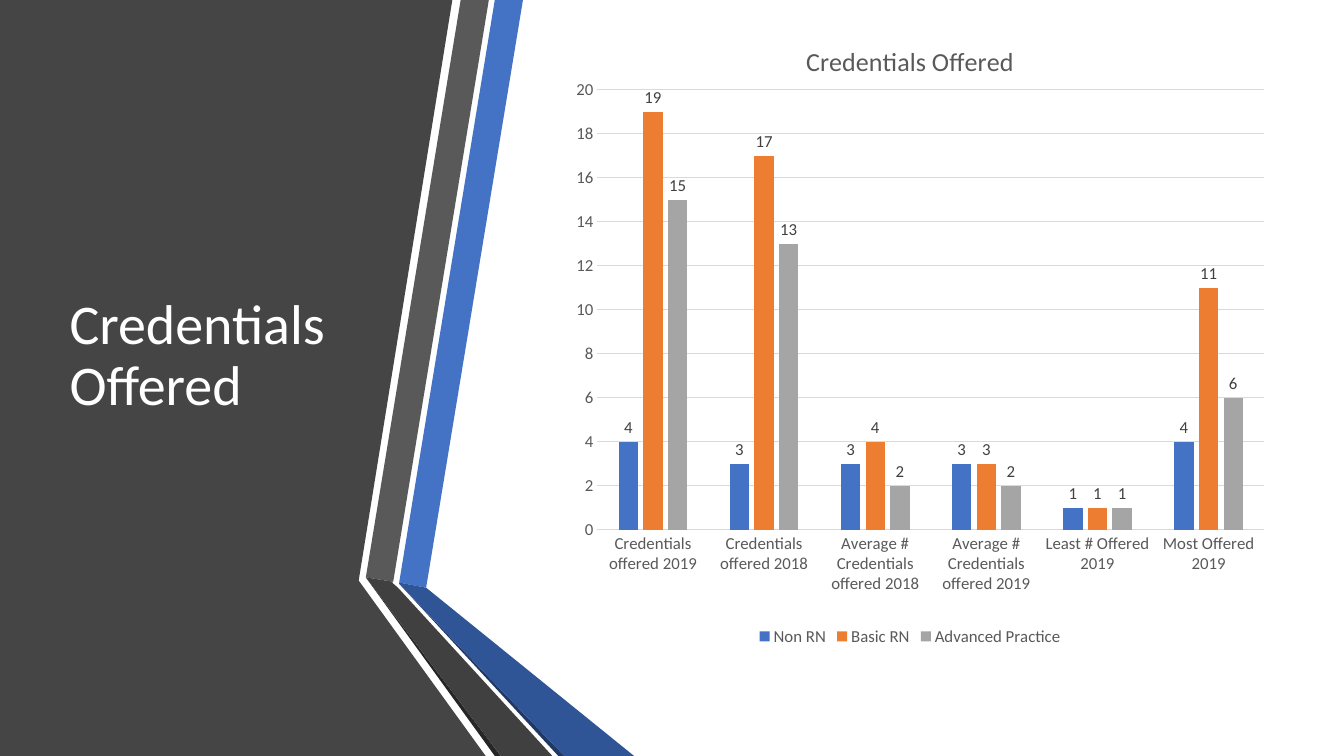
from typing import NamedTuple

from lxml import etree
from pptx import Presentation
from pptx.chart.chart import Chart
from pptx.chart.data import CategoryChartData
from pptx.dml.color import RGBColor
from pptx.enum.chart import XL_CHART_TYPE, XL_LABEL_POSITION, XL_LEGEND_POSITION, XL_TICK_MARK
from pptx.enum.text import MSO_ANCHOR, PP_ALIGN
from pptx.oxml.ns import qn
from pptx.slide import Slide
from pptx.text.text import Font
from pptx.util import Cm, Pt

CLUSTERED = XL_CHART_TYPE.COLUMN_CLUSTERED
OUTSIDE_END = XL_LABEL_POSITION.OUTSIDE_END
BOTTOM = XL_LEGEND_POSITION.BOTTOM
NO_TICK = XL_TICK_MARK.NONE
MIDDLE = MSO_ANCHOR.MIDDLE
LEFT = PP_ALIGN.LEFT

WHITE = RGBColor(0xFF, 0xFF, 0xFF)
PANEL_GRAY = RGBColor(0x45, 0x45, 0x45)
BLUE = RGBColor(0x44, 0x72, 0xC4)
ORANGE = RGBColor(0xED, 0x7D, 0x31)
SILVER = RGBColor(0xA5, 0xA5, 0xA5)
TEXT_GRAY = RGBColor(0x59, 0x59, 0x59)
BLACKISH = RGBColor(0x26, 0x26, 0x26)
NAVY = RGBColor(0x20, 0x38, 0x64)
DEEP_BLUE = RGBColor(0x2F, 0x55, 0x97)
CHARCOAL = RGBColor(0x40, 0x40, 0x40)
GRID_GRAY = RGBColor(0xD9, 0xD9, 0xD9)

FONT = "Calibri"
HEADING = "Credentials Offered"
WIDTH, HEIGHT = 33.87, 19.05
TITLE_ONLY_LAYOUT = 5


class Band(NamedTuple):
    """A filled outline with its corners in centimetres."""

    color: RGBColor
    corners: list[tuple[float, float]]


class Series(NamedTuple):
    name: str
    color: RGBColor
    values: list[int]


BANDS = [
    Band(PANEL_GRAY, [(0, 0), (11.4, 0), (9.04, 14.63), (12.24, HEIGHT), (0, HEIGHT)]),
    Band(BLUE, [(10.06, 14.68), (10.74, 14.81), (13.18, 0), (12.47, 0)]),
    Band(TEXT_GRAY, [(12.32, 0), (11.61, 0), (9.22, 14.55), (9.91, 14.66)]),
    Band(BLACKISH, [(9.22, 14.55), (12.47, HEIGHT), (12.62, HEIGHT)]),
    Band(NAVY, [(10.06, 14.71), (14.07, HEIGHT), (14.22, HEIGHT)]),
    Band(DEEP_BLUE, [(10.06, 14.71), (14.22, HEIGHT), (15.98, HEIGHT),
                     (10.74, 14.81), (10.06, 14.68)]),
    Band(CHARCOAL, [(13.92, HEIGHT), (10.03, 14.81), (9.88, 14.68), (9.91, 14.66),
                    (9.22, 14.55), (12.62, HEIGHT)]),
]

CATEGORIES = [
    "Credentials offered 2019",
    "Credentials offered 2018",
    "Average # Credentials offered 2018",
    "Average # Credentials offered 2019",
    "Least # Offered 2019",
    "Most Offered 2019",
]
SERIES = [
    Series("Non RN", BLUE, [4, 3, 3, 3, 1, 4]),
    Series("Basic RN", ORANGE, [19, 17, 4, 3, 1, 11]),
    Series("Advanced Practice", SILVER, [15, 13, 2, 2, 1, 6]),
]
PLOT_LAYOUT = {"x": 0.063, "y": 0.11, "w": 0.932, "h": 0.699}


def format_font(font: Font, size: float, color: RGBColor) -> None:
    font.name = FONT
    font.size = Pt(size)
    font.bold = False
    font.color.rgb = color


def draw_band(slide: Slide, band: Band) -> None:
    corners = [(round(x * 100), round(y * 100)) for x, y in band.corners]
    builder = slide.shapes.build_freeform(*corners[0], scale=Cm(0.01))
    builder.add_line_segments(corners[1:], close=True)
    shape = builder.convert_to_shape()
    shape.shadow.inherit = False
    shape.fill.solid()
    shape.fill.fore_color.rgb = band.color
    shape.line.fill.background()


def draw_title(slide: Slide) -> None:
    title = slide.shapes.title
    title.left, title.top, title.width, title.height = Cm(1.5), Cm(1.91), Cm(7.72), Cm(14.17)
    slide.shapes._spTree.append(title._element)  # in front of the bands
    frame = title.text_frame
    frame.word_wrap = True
    frame.vertical_anchor = MIDDLE
    paragraph = frame.paragraphs[0]
    paragraph.alignment = LEFT
    paragraph.line_spacing = 0.9
    run = paragraph.add_run()
    run.text = HEADING
    format_font(run.font, 40, WHITE)


def set_plot_layout(chart: Chart) -> None:
    """Fix the inner plot area as fractions of the chart."""
    plot_area = chart._chartSpace.chart.plotArea
    for old_layout in plot_area.findall(qn("c:layout")):
        plot_area.remove(old_layout)
    layout = etree.Element(qn("c:layout"))
    plot_area.insert(0, layout)
    manual = etree.SubElement(layout, qn("c:manualLayout"))
    settings = {"layoutTarget": "inner", "xMode": "edge", "yMode": "edge", **PLOT_LAYOUT}
    for name, value in settings.items():
        etree.SubElement(manual, qn(f"c:{name}")).set("val", str(value))


def format_axes(chart: Chart) -> None:
    category_axis, value_axis = chart.category_axis, chart.value_axis
    for axis in (category_axis, value_axis):
        axis.major_tick_mark = NO_TICK
        axis.minor_tick_mark = NO_TICK
        format_font(axis.tick_labels.font, 12, TEXT_GRAY)
    value_axis.minimum_scale = 0
    value_axis.maximum_scale = 20
    value_axis.major_unit = 2
    value_axis.has_major_gridlines = True
    value_axis.format.line.fill.background()
    for line in (category_axis.format.line, value_axis.major_gridlines.format.line):
        line.color.rgb = GRID_GRAY
        line.width = Pt(0.75)


def format_series(chart: Chart) -> None:
    plot = chart.plots[0]
    plot.gap_width = 219
    plot.overlap = -27
    plot.vary_by_categories = False
    for chart_series, series in zip(plot.series, SERIES):
        chart_series.format.fill.solid()
        chart_series.format.fill.fore_color.rgb = series.color
        labels = chart_series.data_labels
        labels.show_value = True
        labels.position = OUTSIDE_END
        format_font(labels.font, 12, CHARCOAL)


def draw_chart(slide: Slide) -> None:
    data = CategoryChartData()
    data.categories = CATEGORIES
    for series in SERIES:
        data.add_series(series.name, series.values)
    chart = slide.shapes.add_chart(
        CLUSTERED, Cm(13.92), Cm(0.51), Cm(18.03), Cm(15.88), data
    ).chart
    chart.font.name = FONT
    chart.font.size = Pt(10)

    chart.has_title = True
    chart.chart_title.include_in_layout = False
    run = chart.chart_title.text_frame.paragraphs[0].add_run()
    run.text = HEADING
    format_font(run.font, 18.6, TEXT_GRAY)

    chart.has_legend = True
    chart.legend.position = BOTTOM
    chart.legend.include_in_layout = False
    format_font(chart.legend.font, 12, TEXT_GRAY)

    set_plot_layout(chart)
    format_axes(chart)
    format_series(chart)


def main() -> None:
    presentation = Presentation()
    presentation.slide_width, presentation.slide_height = Cm(WIDTH), Cm(HEIGHT)
    slide = presentation.slides.add_slide(presentation.slide_layouts[TITLE_ONLY_LAYOUT])
    for band in BANDS:
        draw_band(slide, band)
    draw_title(slide)
    draw_chart(slide)
    presentation.save("out.pptx")


if __name__ == "__main__":
    main()
